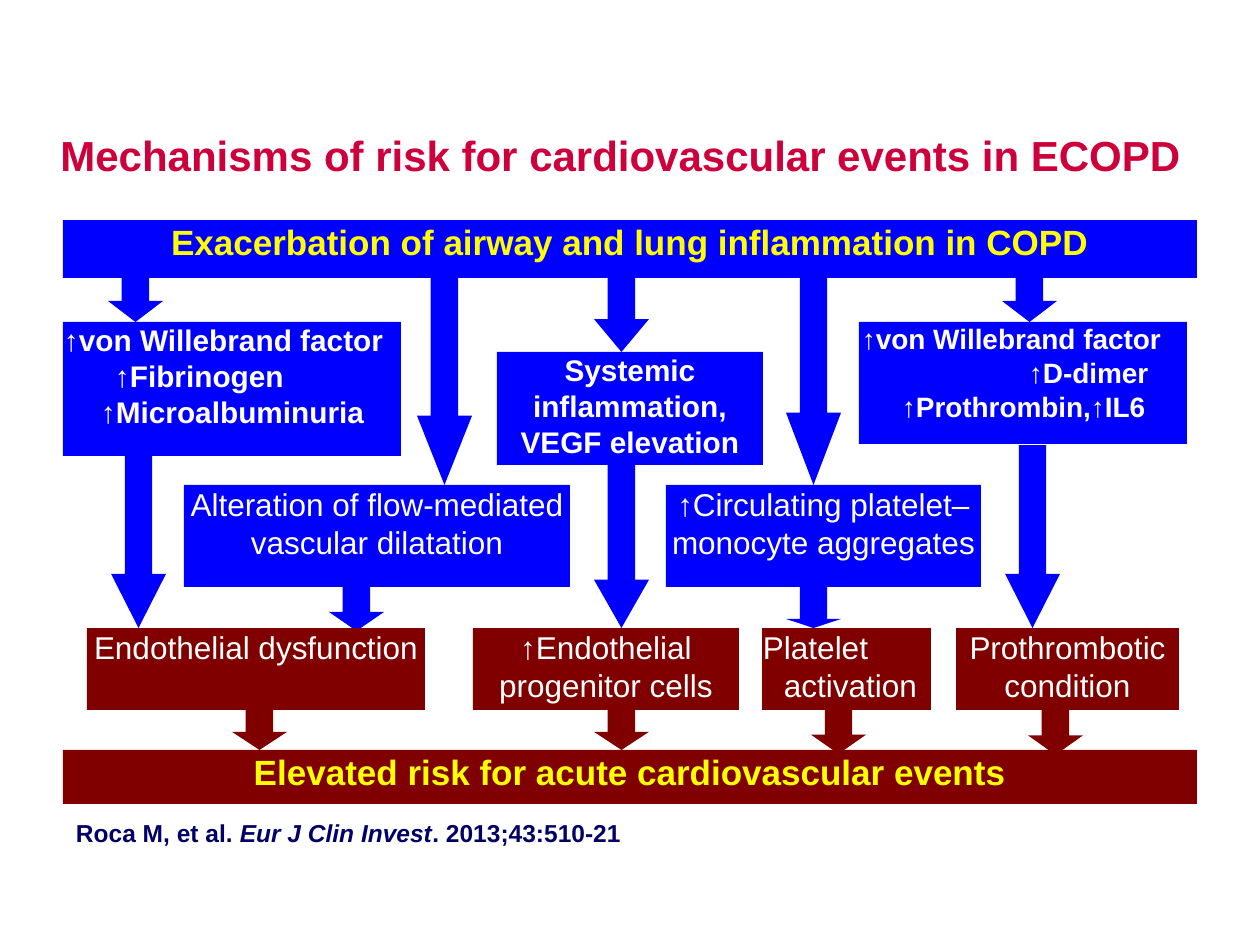
from pptx import Presentation
from pptx import util as u
from pptx.dml.color import RGBColor
from pptx.enum import shapes, text

SCALE = 914400 / 126  # EMU per px
BLUE, MAROON = "0000FF", "800000"
WHITE, YELLOW, CRIMSON, NAVY = "FFFFFF", "FFFF00", "CE003C", "000066"
ARROW_WIDTH, HEAD_SHARE = 55, 0.296

# left, top, width, height, fill, size, bold, text colour, lines as (text, indent);
# an indent of None centres the line
BOXES = [
    (0, 0, 1134, 58, BLUE, 20, True, YELLOW,
     [("Exacerbation of airway and lung inflammation in COPD", None)]),
    (0, 102, 338, 134, BLUE, 17, True, WHITE,
     [("↑von Willebrand factor", 1), ("↑Fibrinogen", 52), ("↑Microalbuminuria", 38)]),
    (434, 132, 266, 113, BLUE, 17, True, WHITE,
     [("Systemic inflammation, VEGF elevation", None)]),
    (796, 102, 328, 122, BLUE, 16, True, WHITE,
     [("↑von Willebrand factor", 3), ("↑D-dimer", 170), ("↑Prothrombin,↑IL6", 43)]),
    (121, 265, 386, 102, BLUE, 18, False, WHITE,
     [("Alteration of flow-mediated vascular dilatation", None)]),
    (603, 265, 315, 102, BLUE, 18, False, WHITE,
     [("↑Circulating platelet–monocyte aggregates", None)]),
    (24, 408, 338, 82, MAROON, 18, False, WHITE, [("Endothelial dysfunction", None)]),
    (410, 408, 266, 82, MAROON, 18, False, WHITE, [("↑Endothelial progenitor cells", None)]),
    (699, 408, 169, 82, MAROON, 18, False, WHITE, [("Platelet", 1), ("activation", 22)]),
    (893, 408, 223, 82, MAROON, 18, False, WHITE, [("Prothrombotic condition", None)]),
    (0, 530, 1134, 54, MAROON, 20, True, YELLOW,
     [("Elevated risk for acute cardiovascular events", None)]),
]

# left, top, bottom
ARROWS = {
    BLUE: [(45, 31, 102), (354, 31, 265), (531, 21, 132), (723, 21, 265), (939, 31, 102),
           (48, 225, 408), (531, 245, 408), (942, 225, 408), (266, 347, 411), (723, 367, 408)],
    MAROON: [(169, 469, 530), (531, 469, 530), (748, 469, 534), (965, 469, 535)],
}


def px(length):
    return u.Emu(round(length * SCALE))


def color(value):
    return RGBColor.from_string(value)


def set_font(font, size, bold, value):
    font.name, font.size, font.bold = "Arial", u.Pt(size), bold
    font.color.rgb = color(value)


def set_insets(frame, across, down):
    frame.word_wrap = True
    frame.margin_left = frame.margin_right = px(across)
    frame.margin_top = frame.margin_bottom = px(down)


def add_filled(page, kind, left, top, width, height, fill):
    shape = page.shapes.add_shape(kind, px(left), px(top), px(width), px(height))
    shape.shadow.inherit = False
    shape.fill.solid()
    shape.fill.fore_color.rgb = color(fill)
    shape.line.fill.background()
    return shape


def add_arrow(page, left, top, height, fill):
    arrow = add_filled(page, shapes.MSO_SHAPE.DOWN_ARROW, left, top, ARROW_WIDTH, height, fill)
    arrow.adjustments[0] = 0.5
    arrow.adjustments[1] = HEAD_SHARE * height / ARROW_WIDTH


def add_box(page, left, top, width, height, fill, size, bold, ink, lines):
    box = add_filled(page, shapes.MSO_SHAPE.RECTANGLE, left, top, width, height, fill)
    frame = box.text_frame
    set_insets(frame, 0, 0)
    frame.vertical_anchor = text.MSO_ANCHOR.TOP
    for index, (words, indent) in enumerate(lines):
        para = frame.add_paragraph() if index else frame.paragraphs[0]
        para.text = words
        if indent is None:
            para.alignment = text.PP_ALIGN.CENTER
        else:
            para.alignment = text.PP_ALIGN.LEFT
            para._p.get_or_add_pPr().set("marL", str(px(indent)))
        set_font(para.font, size, bold, ink)


def add_flow(page, left, top):
    """Place the cascade from exacerbation to events, arrows behind boxes."""
    for fill, arrows in ARROWS.items():
        for x, start, end in arrows:
            add_arrow(page, left + x, top + start, end - start, fill)
    for x, y, *rest in BOXES:
        add_box(page, left + x, top + y, *rest)


def add_title(page, left, top, width, height):
    box = page.shapes.add_textbox(px(left), px(top), px(width), px(height))
    set_insets(box.text_frame, 0, 6)
    box.text_frame.vertical_anchor = text.MSO_ANCHOR.MIDDLE
    para = box.text_frame.paragraphs[0]
    para.text = "Mechanisms of risk for cardiovascular events in ECOPD"
    para.alignment = text.PP_ALIGN.CENTER
    set_font(para.font, 24, True, CRIMSON)


def add_citation(page, left, top, width, height):
    box = page.shapes.add_textbox(px(left), px(top), px(width), px(height))
    set_insets(box.text_frame, 13, 6)
    para = box.text_frame.paragraphs[0]
    para.line_spacing = 0.7
    set_font(para.font, 14, True, NAVY)
    for words, italic in [("Roca M, et al. ", False), ("Eur J Clin Invest", True),
                          (". 2013;43:510-21", False)]:
        span = para.add_run()
        span.text = words
        set_font(span.font, 14, True, NAVY)
        span.font.italic = italic


def main():
    deck = Presentation()
    deck.slide_width, deck.slide_height = px(1260), px(945)
    page = deck.slides.add_slide(deck.slide_layouts[6])
    add_title(page, 44, 106, 1153, 98)
    add_flow(page, 63, 220)
    add_citation(page, 63, 820, 617, 33)
    deck.save("out.pptx")


if __name__ == "__main__":
    main()
